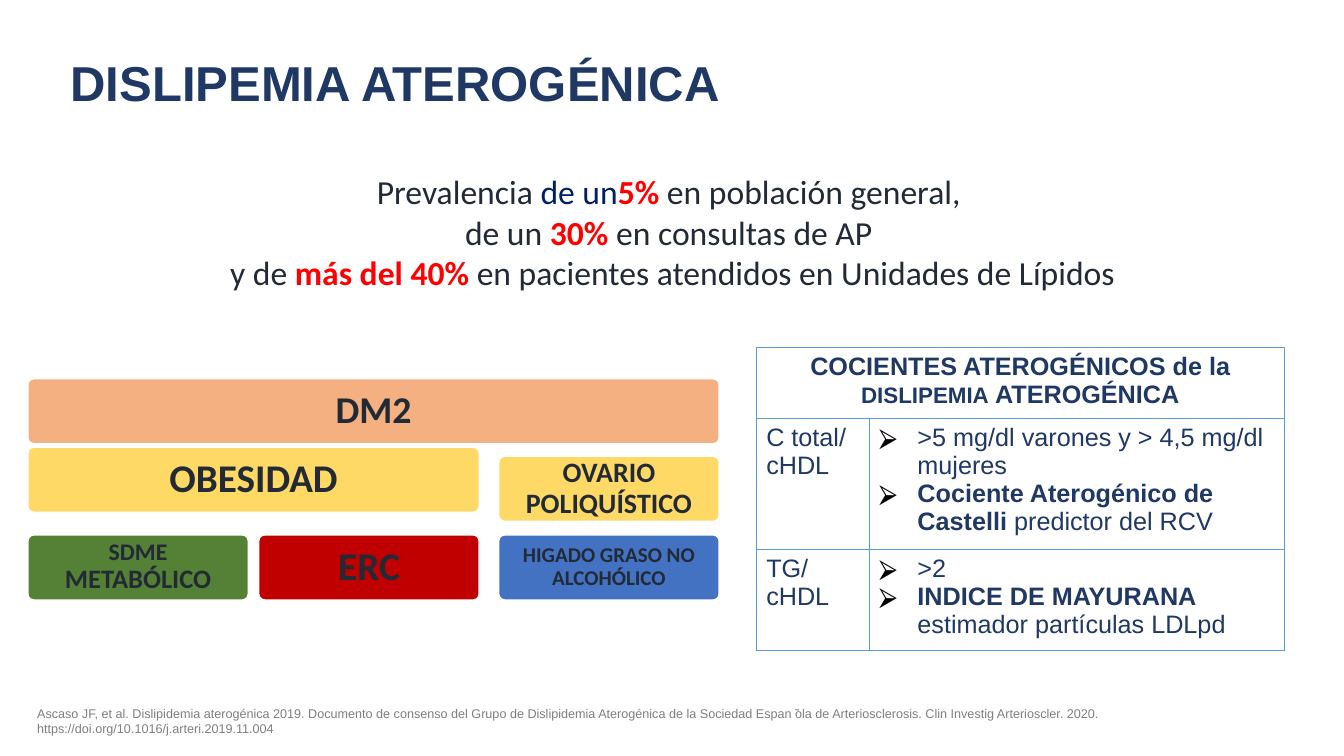
from lxml import etree
from pptx import Presentation
from pptx import util as u
from pptx.dml.color import RGBColor
from pptx.enum import shapes, text
from pptx.oxml import ns

PX = 9144  # 100 px to the inch
NAVY = RGBColor(0x1F, 0x38, 0x64)
INK = RGBColor(0x22, 0x2A, 0x35)
DEEP_BLUE = RGBColor(0x00, 0x20, 0x60)
RED = RGBColor(0xFF, 0x00, 0x00)
GREY = RGBColor(0x7F, 0x7F, 0x7F)
WHITE = RGBColor(0xFF, 0xFF, 0xFF)
PEACH = RGBColor(0xF4, 0xB0, 0x81)
YELLOW = RGBColor(0xFF, 0xD9, 0x66)
GREEN = RGBColor(0x54, 0x81, 0x35)
CRIMSON = RGBColor(0xC0, 0x00, 0x00)
BLUE = RGBColor(0x43, 0x72, 0xC3)
BORDER = RGBColor(0x5B, 0x9B, 0xD5)
CENTER = text.PP_ALIGN.CENTER
MIDDLE = text.MSO_ANCHOR.MIDDLE


def add_runs(paragraph, runs, font):
    """Each run is (words, size, colour, bold)."""
    for words, size, colour, bold in runs:
        run = paragraph.add_run()
        run.text = words
        run.font.name = font
        run.font.size = u.Pt(size)
        run.font.color.rgb = colour
        run.font.bold = bold


def add_text(left, top, width, height, side_inset=10):
    frame = slide.shapes.add_textbox(left * PX, top * PX, width * PX, height * PX).text_frame
    frame.word_wrap = True
    frame.margin_left = frame.margin_right = side_inset * PX
    frame.margin_top = frame.margin_bottom = 5 * PX
    return frame


prs = Presentation()
prs.slide_width, prs.slide_height = 1333 * PX, 750 * PX
slide = prs.slides.add_slide(prs.slide_layouts[6])

# Title
title = add_text(70, 38, 900, 94, side_inset=0)
title.vertical_anchor = MIDDLE
title.paragraphs[0].line_spacing = 0.9
add_runs(title.paragraphs[0], [("DISLIPEMIA ATEROGÉNICA", 35, NAVY, True)], "Arial")

# Prevalence
prevalence_lines = [
    [("Prevalencia", INK, False), (" de un", DEEP_BLUE, False), ("5% ", RED, True),
     ("en población general, ", INK, False)],
    [("de un ", INK, False), ("30% ", RED, True), ("en consultas de AP ", INK, False)],
    [("y de ", INK, False), ("más del 40% ", RED, True),
     ("en pacientes atendidos en Unidades de Lípidos", INK, False)],
]
prevalence = add_text(48, 165, 1238, 131)
for i, line in enumerate(prevalence_lines):
    paragraph = prevalence.add_paragraph() if i else prevalence.paragraphs[0]
    paragraph.alignment = CENTER
    add_runs(paragraph, [(words, 24, colour, bold) for words, colour, bold in line], "Calibri")

# Associated conditions: left, top, width, fill, inset, (words, size)
conditions = [
    (27, 375, 687, PEACH, 11, [("DM2", 27)]),
    (27, 443, 449, YELLOW, 12, [("OBESIDAD", 28)]),
    (27, 530, 220, GREEN, 7, [("SDME ", 17), ("METABÓLICO", 19)]),
    (256, 530, 220, CRIMSON, 12, [("ERC", 28)]),
    (494, 452, 220, YELLOW, 8, [("OVARIO POLIQUÍSTICO", 20)]),
    (494, 530, 220, BLUE, 6, [("HIGADO GRASO NO ALCOHÓLICO", 15)]),
]
for left, top, width, fill, inset, words in conditions:
    condition = slide.shapes.add_shape(shapes.MSO_SHAPE.ROUNDED_RECTANGLE,
                                       left * PX, top * PX, width * PX, 66 * PX)
    condition.adjustments[0] = 0.1
    condition.shadow.inherit = False
    condition.fill.solid()
    condition.fill.fore_color.rgb = fill
    condition.line.color.rgb = WHITE
    condition.line.width = u.Pt(2)
    frame = condition.text_frame
    frame.vertical_anchor = MIDDLE
    frame.margin_left = frame.margin_right = inset * PX
    frame.margin_top = frame.margin_bottom = inset * PX
    frame.paragraphs[0].alignment = CENTER
    frame.paragraphs[0].line_spacing = 0.9
    add_runs(frame.paragraphs[0], [(word, size, INK, True) for word, size in words], "Calibri")

# Atherogenic ratios table
column_widths, row_heights = [112, 412], [66, 122, 94]
ratios = slide.shapes.add_table(3, 2, 750 * PX, 345 * PX,
                                sum(column_widths) * PX, sum(row_heights) * PX).table
ratios.first_row = ratios.horz_banding = False
for column, width in zip(ratios.columns, column_widths):
    column.width = width * PX
for row, height in zip(ratios.rows, row_heights):
    row.height = height * PX
ratios.cell(0, 0).merge(ratios.cell(0, 1))

for cell in (cell for row in ratios.rows for cell in row.cells):
    cell.margin_left = cell.margin_right = 10 * PX
    cell.margin_top = cell.margin_bottom = 5 * PX
    properties = cell._tc.get_or_add_tcPr()
    for side in ("a:lnL", "a:lnR", "a:lnT", "a:lnB"):
        edge = etree.SubElement(properties, ns.qn(side), w=str(u.Pt(0.75)))
        edge_fill = etree.SubElement(edge, ns.qn("a:solidFill"))
        etree.SubElement(edge_fill, ns.qn("a:srgbClr"), val=str(BORDER))
    cell.fill.background()

heading = ratios.cell(0, 0).text_frame.paragraphs[0]
heading.alignment = CENTER
add_runs(heading, [("COCIENTES ATEROGÉNICOS de la ", 18, NAVY, True),
                   ("DISLIPEMIA", 16, NAVY, True),
                   (" ATEROGÉNICA", 18, NAVY, True)], "Arial")

ratio_rows = [
    ("C total/ cHDL", [
        [(">5 mg/dl varones y > 4,5 mg/dl mujeres", False)],
        [("Cociente Aterogénico de Castelli ", True), ("predictor del RCV", False)]]),
    ("TG/ cHDL", [
        [(">2", False)],
        [("INDICE DE MAYURANA ", True), ("estimador partículas LDLpd", False)]]),
]
for r, (ratio, points) in enumerate(ratio_rows, start=1):
    add_runs(ratios.cell(r, 0).text_frame.paragraphs[0], [(ratio, 18, NAVY, False)], "Arial")
    frame = ratios.cell(r, 1).text_frame
    for i, point in enumerate(points):
        paragraph = frame.add_paragraph() if i else frame.paragraphs[0]
        bullet = paragraph._p.get_or_add_pPr()
        bullet.set("marL", str(38 * PX))
        bullet.set("indent", str(-38 * PX))
        bullet_colour = etree.SubElement(bullet, ns.qn("a:buClr"))
        etree.SubElement(bullet_colour, ns.qn("a:srgbClr"), val="000000")
        etree.SubElement(bullet, ns.qn("a:buFont"), typeface="Arial")
        etree.SubElement(bullet, ns.qn("a:buChar"), char="⮚")
        add_runs(paragraph, [(words, 18, NAVY, bold) for words, bold in point], "Arial")

# Reference
reference = add_text(27, 695, 1238, 40)
add_runs(reference.paragraphs[0], [(
    "Ascaso JF, et al. Dislipidemia aterogénica 2019. Documento de consenso del Grupo de "
    "Dislipidemia Aterogénica de la Sociedad Espan ̃ola de Arteriosclerosis. Clin Investig "
    "Arterioscler. 2020. https://doi.org/10.1016/j.arteri.2019.11.004", 9, GREY, False)], "Arial")

prs.save("out.pptx")
